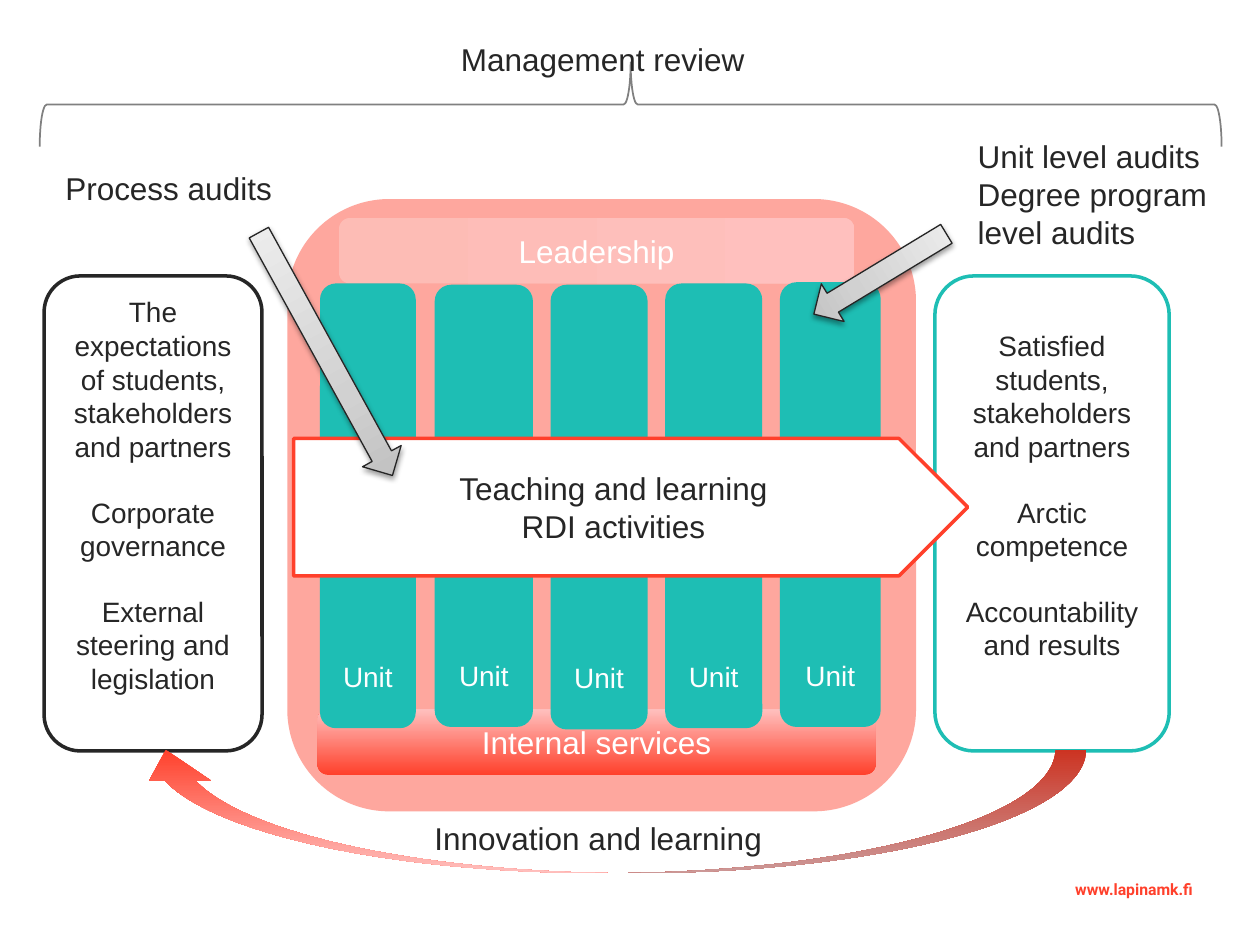
"""Build the quality management overview slide."""
from copy import deepcopy

from lxml import etree
from pptx import Presentation
from pptx.dml.color import RGBColor
from pptx.enum.shapes import MSO_SHAPE
from pptx.enum.text import MSO_ANCHOR, PP_ALIGN
from pptx.oxml.ns import qn
from pptx.util import Inches, Pt

ROUNDED = MSO_SHAPE.ROUNDED_RECTANGLE
DOWN_ARROW = MSO_SHAPE.DOWN_ARROW
CENTER, LEFT = PP_ALIGN.CENTER, PP_ALIGN.LEFT
MIDDLE, BOTTOM, TOP = MSO_ANCHOR.MIDDLE, MSO_ANCHOR.BOTTOM, MSO_ANCHOR.TOP

COLORS = {
    "red": "FF402B", "salmon": "FEA79E", "pink": "FFC0BE", "rose": "FDBCB5",
    "teal": "1EBEB4", "dark": "262626", "white": "FFFFFF", "brace": "808080",
    "outline": "252525", "gray": "BEBEBE", "silver": "D1D1D1", "light": "EEEEEE",
}
RGB = {name: RGBColor.from_string(value) for name, value in COLORS.items()}
RED_FADE = [(0, "red"), (1, "pink")]
ROSE_FADE = [(0, "rose"), (1, "pink")]
GRAY_FADE = [(0, "gray"), (0.35, "silver"), (1, "light")]

presentation = Presentation()
presentation.slide_width, presentation.slide_height = Inches(10), Inches(7.5)
slide = presentation.slides.add_slide(presentation.slide_layouts[6])


def add_shape(kind, box, fill=None, line=None, width=2, angle=90, rotation=0):
    shape = slide.shapes.add_shape(kind, *map(Inches, box))
    shape.shadow.inherit = False
    shape.rotation = rotation
    if fill is None:
        shape.fill.background()
    elif isinstance(fill, str):
        shape.fill.solid()
        shape.fill.fore_color.rgb = RGB[fill]
    else:
        shape.fill.gradient()
        shape.fill.gradient_angle = angle
        stop_list = shape._element.spPr.find(qn("a:gradFill")).find(qn("a:gsLst"))
        for _ in range(len(fill) - len(stop_list)):
            stop_list.append(deepcopy(stop_list[0]))
        for stop, (position, color) in zip(shape.fill.gradient_stops, fill):
            stop.position = position
            stop.color.rgb = RGB[color]
    if line:
        shape.line.color.rgb = RGB[line]
        shape.line.width = Pt(width)
    else:
        shape.line.fill.background()
    return shape


def write(shape, lines, size=18, color="dark", align=CENTER, anchor=MIDDLE,
          gap=0, bottom=0.05, font="Arial", bold=False):
    frame = shape.text_frame
    frame.word_wrap = True
    frame.vertical_anchor = anchor
    frame.margin_bottom = Inches(bottom)
    frame.text = "\n".join(lines)
    for index, paragraph in enumerate(frame.paragraphs):
        paragraph.alignment = align
        if index and gap:
            paragraph.space_before = Pt(gap)
        paragraph.font.name = font
        paragraph.font.size = Pt(size)
        paragraph.font.bold = bold
        paragraph.font.color.rgb = RGB[color]


add_shape(ROUNDED, (2.28, 1.58, 4.99, 4.86), "salmon")

side_panels = [
    ((0.35, 2.19, 1.73, 3.77), "dark",
     ["The expectations of students, stakeholders and partners",
      "Corporate governance", "External steering and legislation"]),
    ((7.42, 2.19, 1.86, 3.77), "teal",
     ["Satisfied students, stakeholders and partners",
      "Arctic competence", "Accountability and results"]),
]
for box, line, lines in side_panels:
    write(add_shape(ROUNDED, box, "white", line), lines, 16, gap=18.4, bottom=0.34)

services = add_shape(ROUNDED, (2.52, 5.63, 4.43, 0.52), RED_FADE)
write(services, ["Internal services"], color="white")
leadership = add_shape(ROUNDED, (2.69, 1.73, 4.09, 0.52), ROSE_FADE, angle=0)
write(leadership, ["Leadership"], color="white")

unit_boxes = [
    (2.54, 2.25, 0.76, 3.53), (3.45, 2.26, 0.78, 3.51), (4.37, 2.26, 0.77, 3.53),
    (5.28, 2.25, 0.77, 3.53), (6.19, 2.24, 0.8, 3.53),
]
for box in unit_boxes:
    write(add_shape(ROUNDED, box, "teal"), ["Unit"], 16, "white", anchor=BOTTOM, bottom=0.24)

add_shape(MSO_SHAPE.CURVED_DOWN_ARROW, (1.07, 5.95, 7.55, 0.98), RED_FADE, rotation=180)

process = add_shape(MSO_SHAPE.PENTAGON, (2.33, 3.48, 5.35, 1.09), "white", "red")
write(process, ["Teaching and learning", "RDI activities"])

for box, rotation in [((2.41, 1.71, 0.35, 2.2), 331.2), ((6.81, 1.56, 0.35, 1.23), 58.8)]:
    arrow = add_shape(DOWN_ARROW, box, GRAY_FADE, "outline", 0.75, rotation=rotation)
    effects = arrow._element.spPr.find(qn("a:effectLst"))
    shadow = etree.SubElement(effects, qn("a:outerShdw"), blurRad=str(Pt(3.1)),
                              dist=str(Pt(1.6)), dir="5400000", rotWithShape="0")
    shadow_color = etree.SubElement(shadow, qn("a:srgbClr"), val="000000")
    etree.SubElement(shadow_color, qn("a:alpha"), val="38000")

add_shape(MSO_SHAPE.LEFT_BRACE, (4.67, -3.86, 0.67, 9.38), line="brace", width=1, rotation=90)

labels = [
    ((3.35, 6.45, 2.83, 0.4), ["Innovation and learning"]),
    ((0.42, 1.29, 2, 0.4), ["Process audits"]),
    ((7.66, 1.04, 2.08, 1.01), ["Unit level audits", "Degree program level audits"]),
    ((3.56, 0.27, 2.61, 0.4), ["Management review"]),
]
for box, lines in labels:
    write(slide.shapes.add_textbox(*map(Inches, box)), lines, align=LEFT, anchor=TOP)

website = slide.shapes.add_textbox(Inches(8), Inches(6.93), Inches(2), Inches(0.42))
write(website, ["www.lapinamk.fi"], 9, "red", anchor=TOP, font="Roboto", bold=True)

presentation.save("out.pptx")
